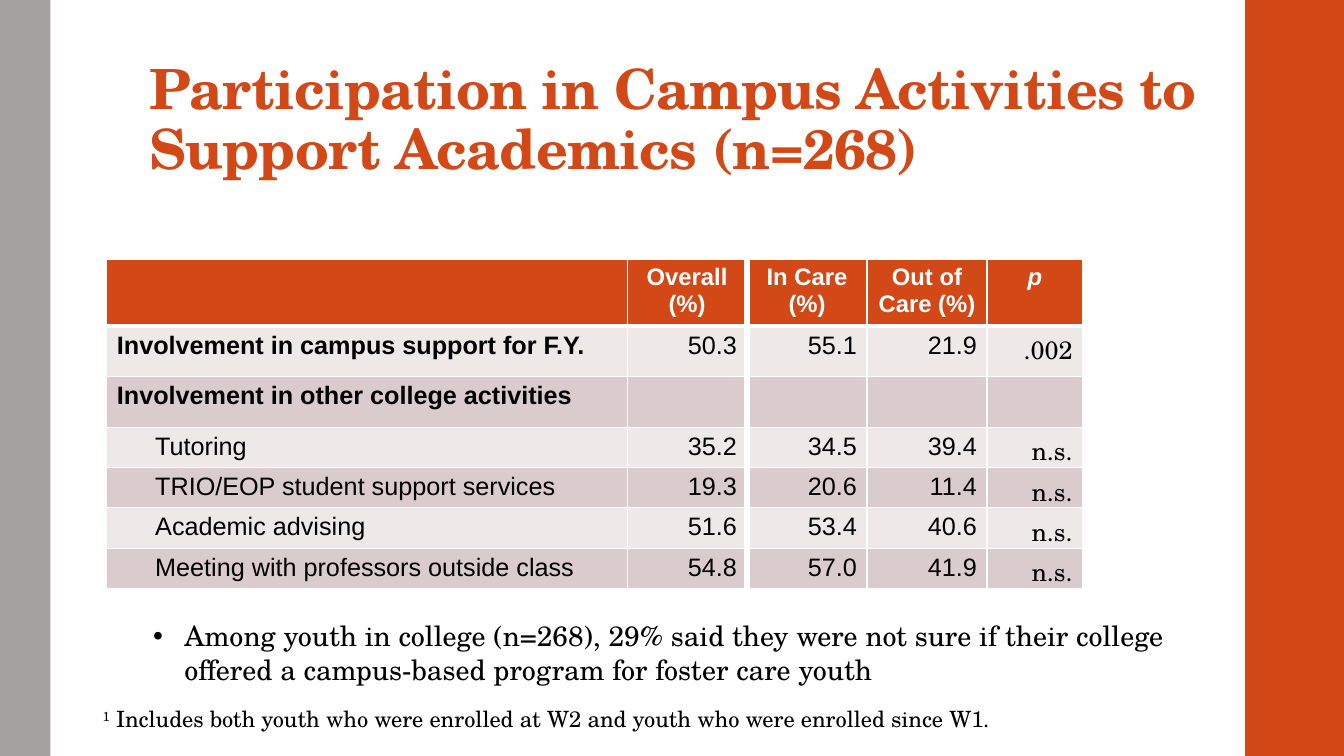
"""Build the slide on campus activities that support academics."""
import pptx
import pptx.util
import pptx.dml.color
import pptx.enum.shapes
import pptx.enum.text
import pptx.oxml
import pptx.oxml.ns
from pptx.util import Inches

SERIF, SANS = "TeX Gyre Schola", "Arial"
ORANGE, GREY, WHITE, BLACK = "D34817", "A6A1A1", "FFFFFF", "000000"
BANDS = ["EEE8E7", "DACCCC"]
ALIGN = pptx.enum.text.PP_ALIGN


def color(hex_string):
    return pptx.dml.color.RGBColor.from_string(hex_string)


def write(para, text, ink, size, extras=None, **formats):
    span = para.add_run()
    span.text = text
    span.font.color.rgb = color(ink)
    span.font.size = pptx.util.Pt(size)
    for name, value in formats.items():
        setattr(span.font, name, value)
    for name, value in (extras or {}).items():
        span.font._element.set(name, value)


deck = pptx.Presentation()
deck.slide_width, deck.slide_height = Inches(13.33), Inches(7.5)
page = deck.slides.add_slide(deck.slide_layouts[6])

for left, width, fill in [(12.35, 0.98, ORANGE), (0, 0.5, GREY)]:
    bar = page.shapes.add_shape(
        pptx.enum.shapes.MSO_SHAPE.RECTANGLE, Inches(left), 0, Inches(width), Inches(7.5))
    bar.shadow.inherit = False
    bar.fill.solid()
    bar.fill.fore_color.rgb = color(fill)
    bar.line.fill.background()

paras = {}
for name, place in {
    "title": (1.38, 0.32, 10.6, 1.53),
    "footnote": (0.92, 6.95, 10.53, 0.37),
    "finding": (1.42, 6.09, 10.72, 0.77),
}.items():
    box = page.shapes.add_textbox(*map(Inches, place))
    box.text_frame.word_wrap = True
    paras[name] = box.text_frame.paragraphs[0]
    if name == "title":
        box.text_frame.vertical_anchor = pptx.enum.text.MSO_ANCHOR.BOTTOM
        box.text_frame.margin_top = Inches(0.03)

paras["title"].line_spacing = 0.9
write(paras["title"], "Participation in Campus Activities to Support Academics (n=268)",
      ORANGE, 39.6, {"spc": "-50"}, name=SERIF, bold=True)
write(paras["footnote"], "1", BLACK, 16, {"baseline": "30000"}, name=SERIF)
write(paras["footnote"],
      " Includes both youth who were enrolled at W2 and youth who were enrolled since W1.",
      BLACK, 16, name=SERIF)
write(paras["finding"],
      "Among youth in college (n=268), 29% said they were not sure if their college "
      "offered a campus-based program for foster care youth", BLACK, 20, name=SERIF)
bullet_props = paras["finding"]._p.get_or_add_pPr()
bullet_props.set("marL", str(Inches(0.31)))
bullet_props.set("indent", str(-Inches(0.31)))
for markup in ['<a:buFont %s typeface="Arial"/>', '<a:buChar %s char="•"/>']:
    bullet_props.append(pptx.oxml.parse_xml(markup % pptx.oxml.ns.nsdecls("a")))

rows = [
    ["", "Overall (%)", "In Care (%)", "Out of Care (%)", "p"],
    ["Involvement in campus support for F.Y.", "50.3", "55.1", "21.9", ".002"],
    ["Involvement in other college activities", "", "", "", ""],
    ["Tutoring", "35.2", "34.5", "39.4", "n.s."],
    ["TRIO/EOP student support services", "19.3", "20.6", "11.4", "n.s."],
    ["Academic advising", "51.6", "53.4", "40.6", "n.s."],
    ["Meeting with professors outside class", "54.8", "57.0", "41.9", "n.s."],
]
widths = [5.16, 1.19, 1.19, 1.19, 0.95]
heights = [0.65, 0.5, 0.5, 0.4, 0.4, 0.4, 0.4]
table = page.shapes.add_table(
    len(rows), len(widths), Inches(1.06), Inches(2.57),
    Inches(sum(widths)), Inches(sum(heights))).table
for column, width in zip(table.columns, widths):
    column.width = Inches(width)
for row, height in zip(table.rows, heights):
    row.height = Inches(height)

for r, texts in enumerate(rows):
    for c, text in enumerate(texts):
        cell = table.cell(r, c)
        cell.fill.solid()
        cell.fill.fore_color.rgb = color(ORANGE if r == 0 else BANDS[(r - 1) % 2])
        borders = {
            "lnL": 4.5 if c == 2 else 1,
            "lnR": 4.5 if c == 1 else 1,
            "lnT": 3 if r == 1 else 1,
            "lnB": 3 if r == 0 else 1,
        }
        cell_props = cell._tc.get_or_add_tcPr()
        for position, (side, points) in enumerate(borders.items()):
            cell_props.insert(position, pptx.oxml.parse_xml(
                f'<a:{side} {pptx.oxml.ns.nsdecls("a")} w="{pptx.util.Pt(points)}">'
                f'<a:solidFill><a:srgbClr val="{WHITE}"/></a:solidFill></a:{side}>'))
        if not text:
            continue
        para = cell.text_frame.paragraphs[0]
        if r == 0:
            para.alignment = ALIGN.CENTER
            write(para, text, WHITE, 17, name=SANS, bold=True, italic=c == 4)
            continue
        para.alignment = ALIGN.RIGHT if c else ALIGN.LEFT
        if c == 0 and r > 2:
            para._p.get_or_add_pPr().set("marL", str(Inches(0.38)))
        write(para, text, BLACK, 18, name=SERIF if c == 4 else SANS, bold=c == 0 and r < 3)

deck.save("out.pptx")
